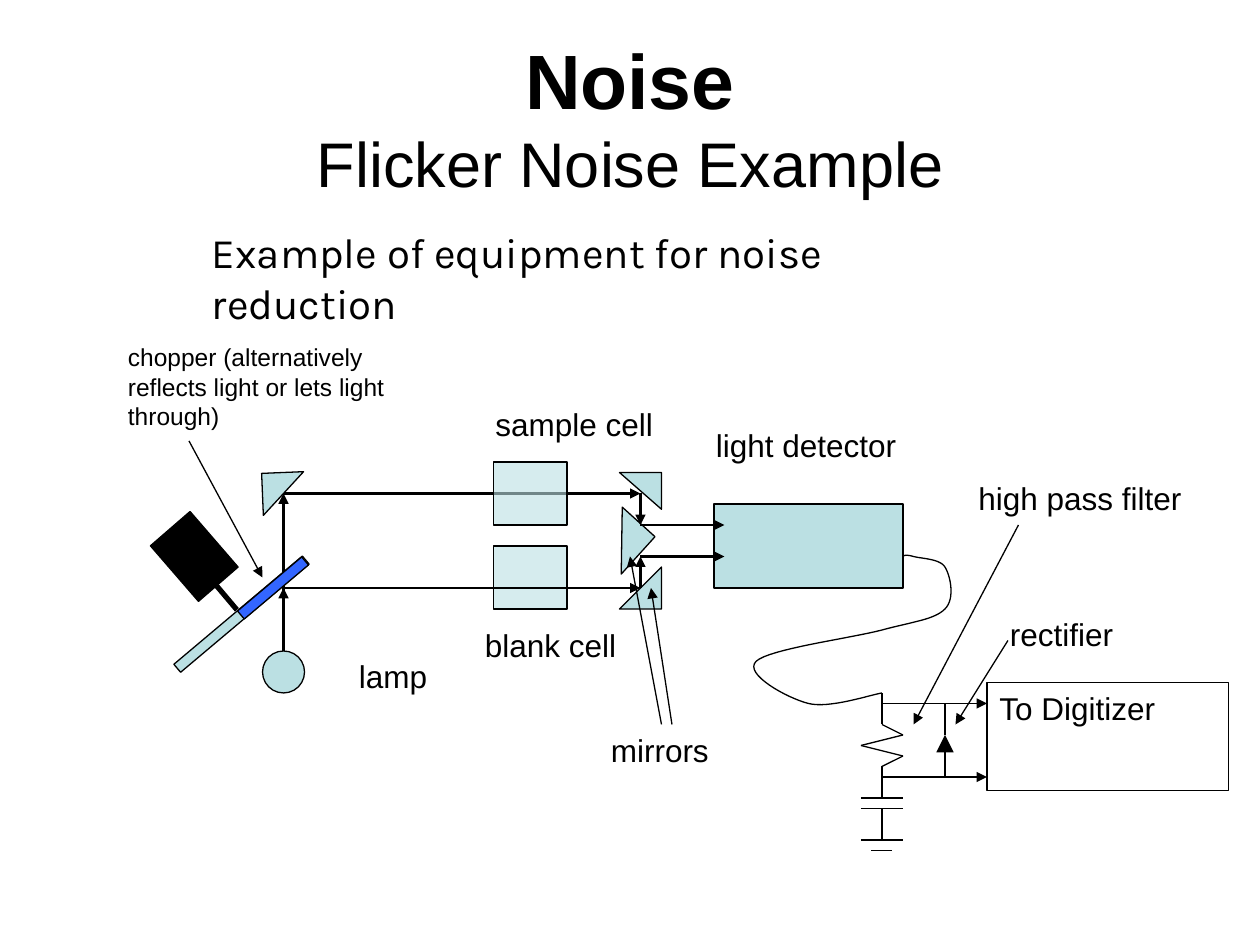
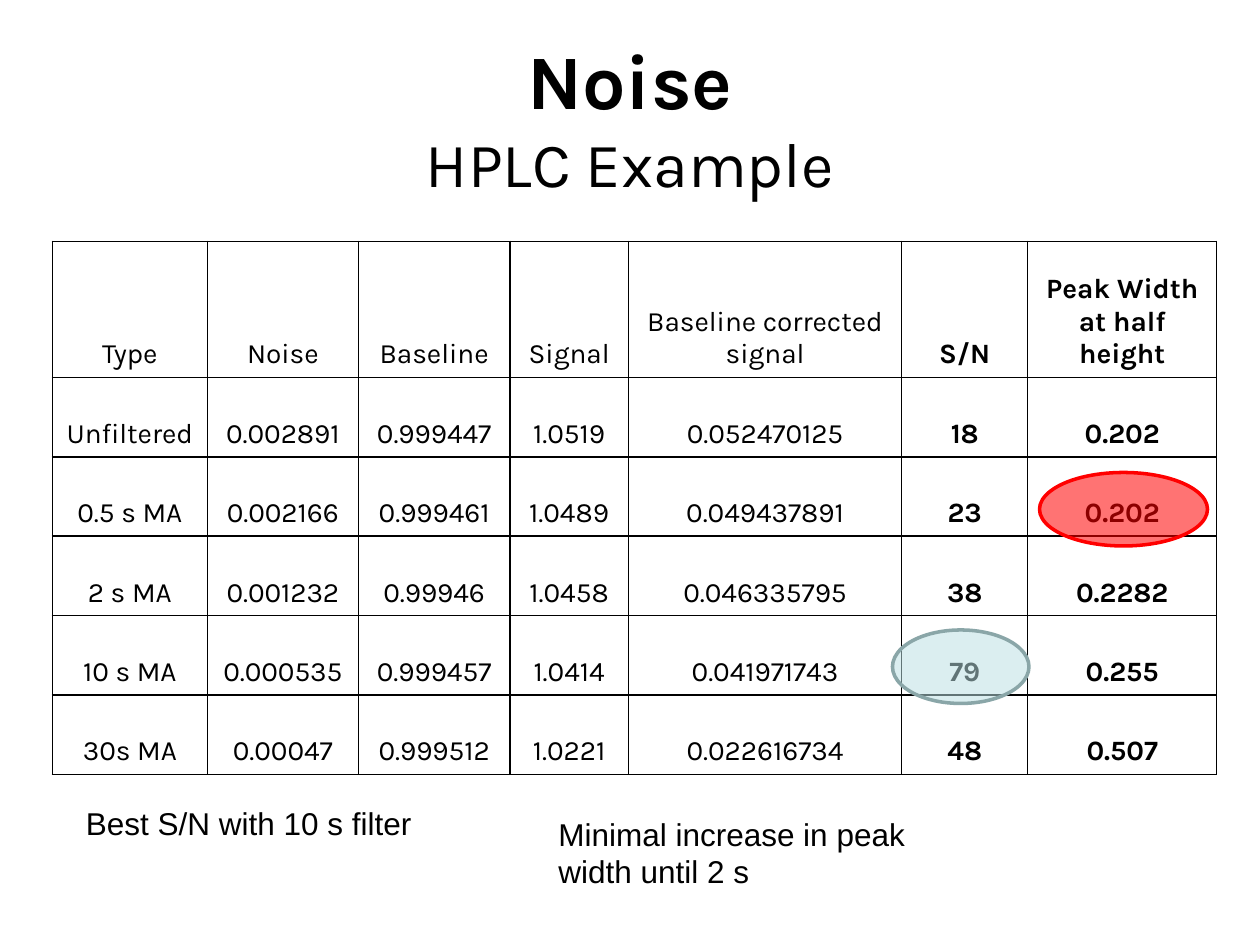
from dataclasses import dataclass
from itertools import pairwise
from typing import Optional

from lxml.etree import SubElement
from pptx import Presentation
from pptx.dml.color import RGBColor
from pptx.enum.shapes import MSO_CONNECTOR, MSO_SHAPE
from pptx.enum.text import MSO_ANCHOR, MSO_AUTO_SIZE, PP_ALIGN
from pptx.oxml.ns import qn
from pptx.util import Cm, Pt

BLACK = RGBColor(0x00, 0x00, 0x00)
AQUA = RGBColor(0xBB, 0xE0, 0xE3)
SLATE = RGBColor(0x8A, 0xA6, 0xA8)
BLUE = RGBColor(0x33, 0x66, 0xFF)
RED = RGBColor(0xFF, 0x00, 0x00)
SANS, KARLA = "Arial", "Karla"
RECT, OVAL, WEDGE = MSO_SHAPE.RECTANGLE, MSO_SHAPE.OVAL, MSO_SHAPE.RIGHT_TRIANGLE


def grid(count: float) -> int:
    """Length of a number of grid steps, 120 to the slide width."""
    return Cm(count * 25.4 / 120)


@dataclass
class Box:
    """A preset shape, placed in grid steps."""
    x: float
    y: float
    w: float
    h: float
    kind: int = RECT
    turn: float = 0
    fill: Optional[RGBColor] = AQUA
    alpha: int = 100
    line: RGBColor = BLACK
    thick: float = 0.75


@dataclass
class Line:
    """A straight line, with an arrowhead of the given size at its end."""
    x1: float
    y1: float
    x2: float
    y2: float
    thick: float = 0.75
    head: str = ""


@dataclass
class Label:
    """A text box, placed in grid steps."""
    text: str
    x: float
    y: float
    w: float
    h: float = 4.8
    size: int = 18
    font: str = SANS


def write(frame, text: str, *, size: int = 18, font: str = SANS,
          bold: bool = False, align: PP_ALIGN = PP_ALIGN.LEFT) -> None:
    """Add text to the first paragraph, on a new line if it holds some."""
    para = frame.paragraphs[0]
    para.alignment = align
    if para.runs:
        para.add_line_break()
    run = para.add_run()
    run.text = text
    run.font.size, run.font.name, run.font.bold = Pt(size), font, bold
    run.font.color.rgb = BLACK


def draw_box(slide, box: Box):
    shape = slide.shapes.add_shape(
        box.kind, *map(grid, (box.x, box.y, box.w, box.h)))
    shape.shadow.inherit = False
    shape.rotation = box.turn
    shape.line.color.rgb, shape.line.width = box.line, Pt(box.thick)
    if box.fill is None:
        shape.fill.background()
        return shape
    shape.fill.solid()
    shape.fill.fore_color.rgb = box.fill
    if box.alpha < 100:
        tint = shape.element.spPr.find(qn("a:solidFill"))[0]
        SubElement(tint, qn("a:alpha"), val=str(box.alpha * 1000))
    return shape


def draw_line(slide, line: Line) -> None:
    wire = slide.shapes.add_connector(
        MSO_CONNECTOR.STRAIGHT,
        *map(grid, (line.x1, line.y1, line.x2, line.y2)))
    wire.line.color.rgb, wire.line.width = BLACK, Pt(line.thick)
    if line.head:
        SubElement(wire.line._get_or_add_ln(), qn("a:tailEnd"),
                   type="triangle", w=line.head, len=line.head)
    SubElement(wire.element.spPr, qn("a:effectLst"))


def draw_label(slide, label: Label) -> None:
    box = slide.shapes.add_textbox(
        *map(grid, (label.x, label.y, label.w, label.h)))
    frame = box.text_frame
    frame.word_wrap = True
    frame.auto_size = MSO_AUTO_SIZE.SHAPE_TO_FIT_TEXT
    write(frame, label.text, size=label.size, font=label.font)


def draw(slide, parts: list) -> None:
    tools = {Box: draw_box, Line: draw_line, Label: draw_label}
    for part in parts:
        tools[type(part)](slide, part)


def draw_curve(slide, start: tuple, bends: list) -> None:
    """Trace cubic curves; each bend holds two handles and an end point."""
    steps, spots = 16, []
    here = start
    for one, two, end in bends:
        for step in range(1, steps + 1):
            t = step / steps
            spots.append(tuple(
                grid((1 - t) ** 3 * a + 3 * t * (1 - t) ** 2 * b
                     + 3 * t * t * (1 - t) * c + t ** 3 * d)
                for a, b, c, d in zip(here, one, two, end)))
        here = end
    trace = slide.shapes.build_freeform(*map(grid, start))
    trace.add_line_segments(spots, close=False)
    shape = trace.convert_to_shape()
    shape.shadow.inherit = False
    shape.fill.background()
    shape.line.color.rgb, shape.line.width = BLACK, Pt(0.75)


def draw_table(slide, x: float, y: float, rows: list, wide: list,
               tall: list, strong: int) -> None:
    """Draw a ruled table; columns from `strong` on are bold."""
    frame = slide.shapes.add_table(
        len(rows), len(wide), grid(x), grid(y), Cm(sum(wide)), Cm(sum(tall)))
    table = frame.table
    table.first_row = table.horz_banding = False
    for col, width in zip(table.columns, wide):
        col.width = Cm(width)
    for row, height, texts in zip(table.rows, tall, rows):
        row.height = Cm(height)
        for spot, (cell, text) in enumerate(zip(row.cells, texts)):
            rule_cell(cell)
            cell.fill.background()
            cell.vertical_anchor = MSO_ANCHOR.BOTTOM
            write(cell.text_frame, text, size=16, font=KARLA,
                  bold=spot >= strong, align=PP_ALIGN.CENTER)


def rule_cell(cell) -> None:
    props = cell._tc.get_or_add_tcPr()
    for side in "LRTB":
        edge = SubElement(props, qn(f"a:ln{side}"), w=str(Pt(1)))
        fill = SubElement(edge, qn("a:solidFill"))
        SubElement(fill, qn("a:srgbClr"), val=str(BLACK))


def new_slide(deck, topic: str, font: str):
    """Add a blank slide with the shared two-line title."""
    slide = deck.slides.add_slide(deck.slide_layouts[6])
    box = slide.shapes.add_textbox(*map(grid, (6, 3.6, 108, 15)))
    frame = box.text_frame
    frame.word_wrap = True
    frame.vertical_anchor = MSO_ANCHOR.MIDDLE
    for text, size, bold in (("Noise", 44, True), (topic, 36, False)):
        write(frame, text, size=size, font=font, bold=bold,
              align=PP_ALIGN.CENTER)
    return slide


def beam(*ends: float) -> Line:
    return Line(*ends, thick=1.5, head="med")


def arrow(*ends: float) -> Line:
    return Line(*ends, head="med")


# Light source, mirrors, cells and detector, from back to front
OPTICS = [
    Box(25, 62, 4, 4, OVAL),
    Box(25, 45, 4, 4, WEDGE, 87.6),
    Box(15, 58, 16, 1, turn=319.9),
    Box(59, 54, 4, 4, WEDGE, 270),
    Box(59, 45, 4, 3.5, WEDGE, 180),
    Box(57.12, 49.08, 4.2, 4.8, WEDGE, 222.1),
    beam(27, 47, 61, 47),
    *(Box(47, top, 7, 6, alpha=60) for top in (44, 52)),
    beam(27, 62, 27, 56),
    beam(27, 56, 61, 56),
    Box(68, 48, 18, 8),
    beam(27, 62, 27, 47),
    beam(61, 47, 61, 50),
    beam(61, 56, 61, 53),
    *(beam(61, y, 69, y) for y in (50, 53)),
    # Chopper blade, motor and shaft
    Box(22, 55.5, 8, 1, turn=319.9, fill=BLUE),
    Box(15, 50.5, 7, 5, turn=49.1, fill=BLACK),
    Line(20.64, 55.8, 22.56, 58.08, thick=3),
]

# Filter, rectifier and ground
ZIGZAG = [(84, 66), (84, 69), (86, 70), (82, 71), (86, 72), (84, 73), (84, 76)]
CIRCUIT = [
    *(Line(*a, *b) for a, b in pairwise(ZIGZAG)),
    *(Line(82, y, 86, y) for y in (76, 77, 80)),
    Line(84, 77, 84, 80),
    Line(83, 81, 85, 81),
    *(arrow(84, y, 94, y) for y in (67, 74)),
    Line(90, 74, 90, 70, head="lg"),
    Line(90, 67, 90, 70),
]

# Cable from detector to filter
CABLE = [
    ((86.1, 52.9), (86.3, 52.8), (87, 53)),
    ((87.7, 53.2), (89.5, 53.2), (90, 54)),
    ((90.5, 54.8), (91, 57), (90, 58)),
    ((89, 59), (87, 59.2), (84, 60)),
    ((81, 60.8), (73.2, 61.8), (72, 63)),
    ((70.8, 64.2), (75, 66.5), (77, 67)),
    ((79, 67.5), (82.8, 66.2), (84, 66)),
]

# Captions and their pointers
NOTES = [
    Label("Example of equipment for noise reduction", 19, 21, 78, 6, 24, KARLA),
    Label("chopper (alternatively reflects light or lets light through)",
          11, 32, 27, 9.6, 14),
    Label("lamp", 33, 62, 15),
    Label("light detector", 67, 40, 25),
    Label("sample cell", 46, 38, 37),
    Label("blank cell", 45, 59, 19),
    Label("mirrors", 57, 69, 33),
    Label("high pass filter", 92, 45, 24),
    Label("rectifier", 95, 58, 18),
    arrow(18, 42, 25, 55),
    arrow(64, 69, 62, 56),
    arrow(63, 69, 60, 53),
    arrow(97, 50, 87, 69),
    arrow(96, 61, 91, 69),
]

ROWS = [
    ["Type", "Noise", "Baseline", "Signal", "Baseline corrected signal",
     "S/N", "Peak Width at half height"],
    ["Unfiltered", "0.002891", "0.999447", "1.0519", "0.052470125", "18", "0.202"],
    ["0.5 s MA", "0.002166", "0.999461", "1.0489", "0.049437891", "23", "0.202"],
    ["2 s MA", "0.001232", "0.99946", "1.0458", "0.046335795", "38", "0.2282"],
    ["10 s MA", "0.000535", "0.999457", "1.0414", "0.041971743", "79", "0.255"],
    ["30s MA", "0.00047", "0.999512", "1.0221", "0.022616734", "48", "0.507"],
]

# Highlights and remarks on the table
MARKS = [
    Box(85, 60, 13, 7, OVAL, alpha=52, line=SLATE, thick=2),
    Label("Best S/N with 10 s filter", 7, 76, 34),
    Box(99, 45, 16, 7, OVAL, fill=RED, alpha=55, line=RED, thick=2),
    Label("Minimal increase in peak width until 2 s", 52, 77, 36, 8.5),
]


def main() -> None:
    deck = Presentation()
    deck.slide_width, deck.slide_height = Cm(25.4), Cm(19.05)

    slide = new_slide(deck, "Flicker Noise Example", SANS)
    draw(slide, OPTICS)
    draw_curve(slide, (86, 53), CABLE)
    draw(slide, CIRCUIT)
    port = draw_box(slide, Box(94, 65, 23, 10.32, fill=None))
    port.text_frame.vertical_anchor = MSO_ANCHOR.TOP
    write(port.text_frame, "To Digitizer")
    draw(slide, NOTES)

    slide = new_slide(deck, "HPLC Example", KARLA)
    draw_table(slide, 5, 23, ROWS, [3.12, 3.05, 3.05, 2.39, 5.51, 2.54, 3.81],
               [2.74] + [1.6] * 5, strong=5)
    draw(slide, MARKS)

    deck.save("out.pptx")


if __name__ == "__main__":
    main()
